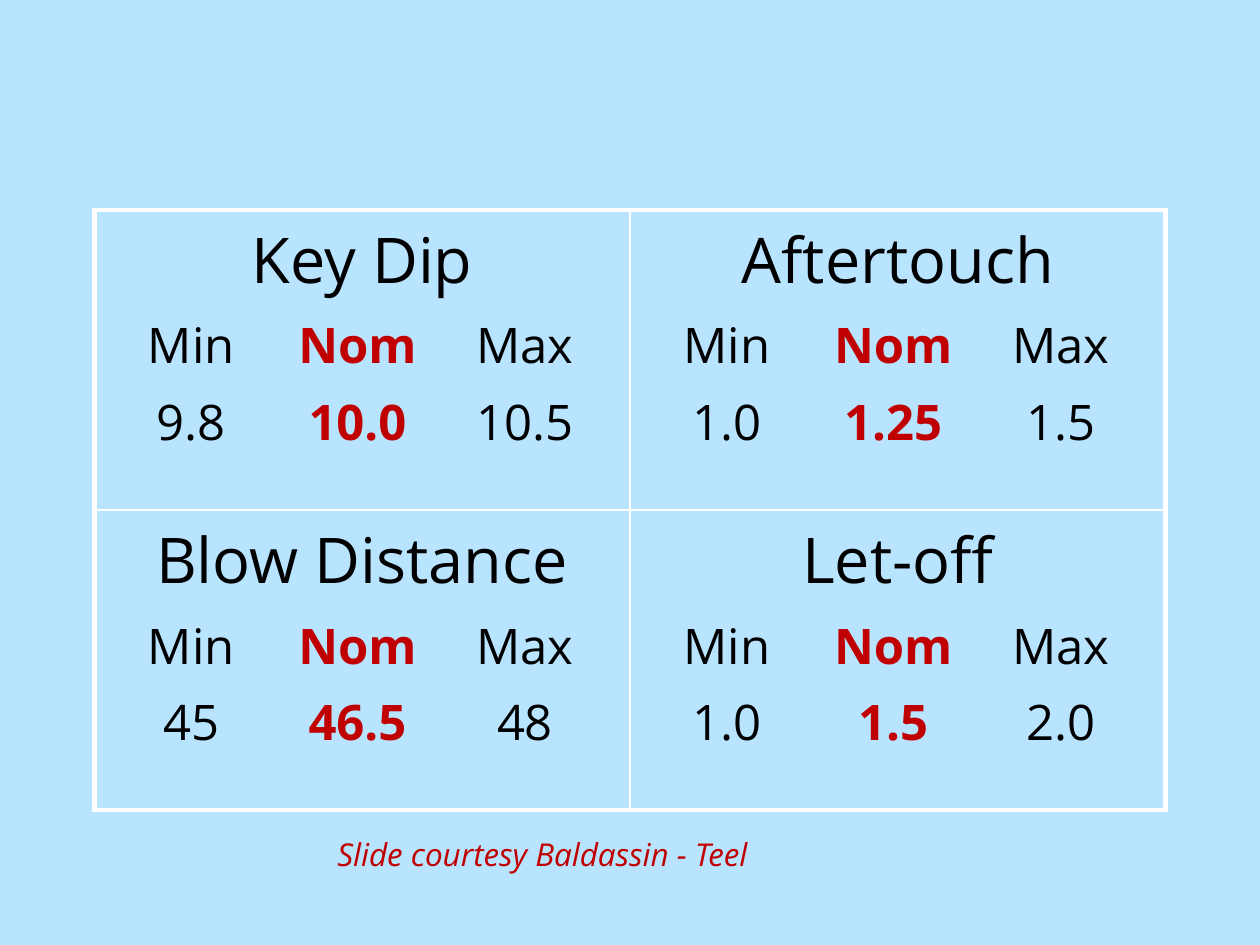
from lxml.etree import SubElement
from pptx import Presentation
from pptx.dml.color import RGBColor
from pptx.enum.text import MSO_AUTO_SIZE as AutoSize, PP_ALIGN as Align
from pptx.oxml.ns import qn
from pptx.util import Cm, Pt

COLORS = {"sky": "B9E4FF", "white": "FFFFFF", "black": "000000", "red": "C00000"}
FONT = "Open Sans"
TAB_CENTERS = (1.7, 5.05, 8.43)
LABELS = ("Min", "Nom", "Max")
SPECIFICATIONS = [
    [("Key Dip", ("9.8", "10.0", "10.5")), ("Aftertouch", ("1.0", "1.25", "1.5"))],
    [("Blow Distance", ("45", "46.5", "48")), ("Let-off", ("1.0", "1.5", "2.0"))],
]


class SlideBuilder:
    def __init__(self, slide):
        self.slide = slide
        fill = slide.background.fill
        fill.solid()
        fill.fore_color.rgb = self.color("sky")

    def color(self, name):
        return RGBColor.from_string(COLORS[name])

    def style(self, font, size, color="black"):
        font.name = FONT
        font.size = Pt(size)
        font.color.rgb = self.color(color)

    def add_border(self, cell, side, width):
        properties = cell._tc.get_or_add_tcPr()
        line = SubElement(properties, qn(f"a:ln{side}"), w=str(Pt(width)))
        fill = SubElement(line, qn("a:solidFill"))
        SubElement(fill, qn("a:srgbClr"), val=COLORS["white"])

    def add_value_line(self, frame, values):
        paragraph = frame.add_paragraph()
        paragraph.alignment = Align.LEFT
        paragraph.space_before = Pt(5.5)
        self.style(paragraph.font, 28)
        properties = paragraph._p.get_or_add_pPr()
        tabs = properties.makeelement(qn("a:tabLst"))
        properties.find(qn("a:defRPr")).addprevious(tabs)
        for center in TAB_CENTERS:
            SubElement(tabs, qn("a:tab"), pos=str(Cm(center)), algn="ctr")
        for index, value in enumerate(values):
            run = paragraph.add_run()
            run.text = "\t" + value
            nominal = index == 1
            self.style(run.font, 28, "red" if nominal else "black")
            run.font.bold = nominal

    def fill_cell(self, cell, heading, values):
        frame = cell.text_frame
        paragraph = frame.paragraphs[0]
        paragraph.text = heading
        paragraph.alignment = Align.CENTER
        self.style(paragraph.font, 36)
        for line in (LABELS, values):
            self.add_value_line(frame, line)

    def add_table(self, left, top, width, height, content):
        rows, columns = len(content), len(content[0])
        table = self.slide.shapes.add_table(
            rows, columns, Cm(left), Cm(top), Cm(width), Cm(height)
        ).table
        table.first_row = table.horz_banding = False
        for row, entries in enumerate(content):
            for column, (heading, values) in enumerate(entries):
                cell = table.cell(row, column)
                self.fill_cell(cell, heading, values)
                outer_sides = {
                    "L": column == 0,
                    "R": column == columns - 1,
                    "T": row == 0,
                    "B": row == rows - 1,
                }
                for side, outer in outer_sides.items():
                    self.add_border(cell, side, 3 if outer else 1.5)
                cell.fill.background()

    def add_credit(self, text, left, top, width, height):
        box = self.slide.shapes.add_textbox(Cm(left), Cm(top), Cm(width), Cm(height))
        frame = box.text_frame
        frame.word_wrap = True
        frame.auto_size = AutoSize.NONE
        paragraph = frame.paragraphs[0]
        paragraph.text = text
        self.style(paragraph.font, 18, "red")
        paragraph.font.italic = True


def main():
    presentation = Presentation()
    presentation.slide_width, presentation.slide_height = Cm(25.4), Cm(19.05)
    slide = presentation.slides.add_slide(presentation.slide_layouts[6])
    builder = SlideBuilder(slide)
    builder.add_table(1.9, 4.23, 21.6, 12.1, SPECIFICATIONS)
    builder.add_credit("Slide courtesy Baldassin - Teel", 6.55, 16.71, 13.54, 1.8)
    presentation.save("out.pptx")


if __name__ == "__main__":
    main()
